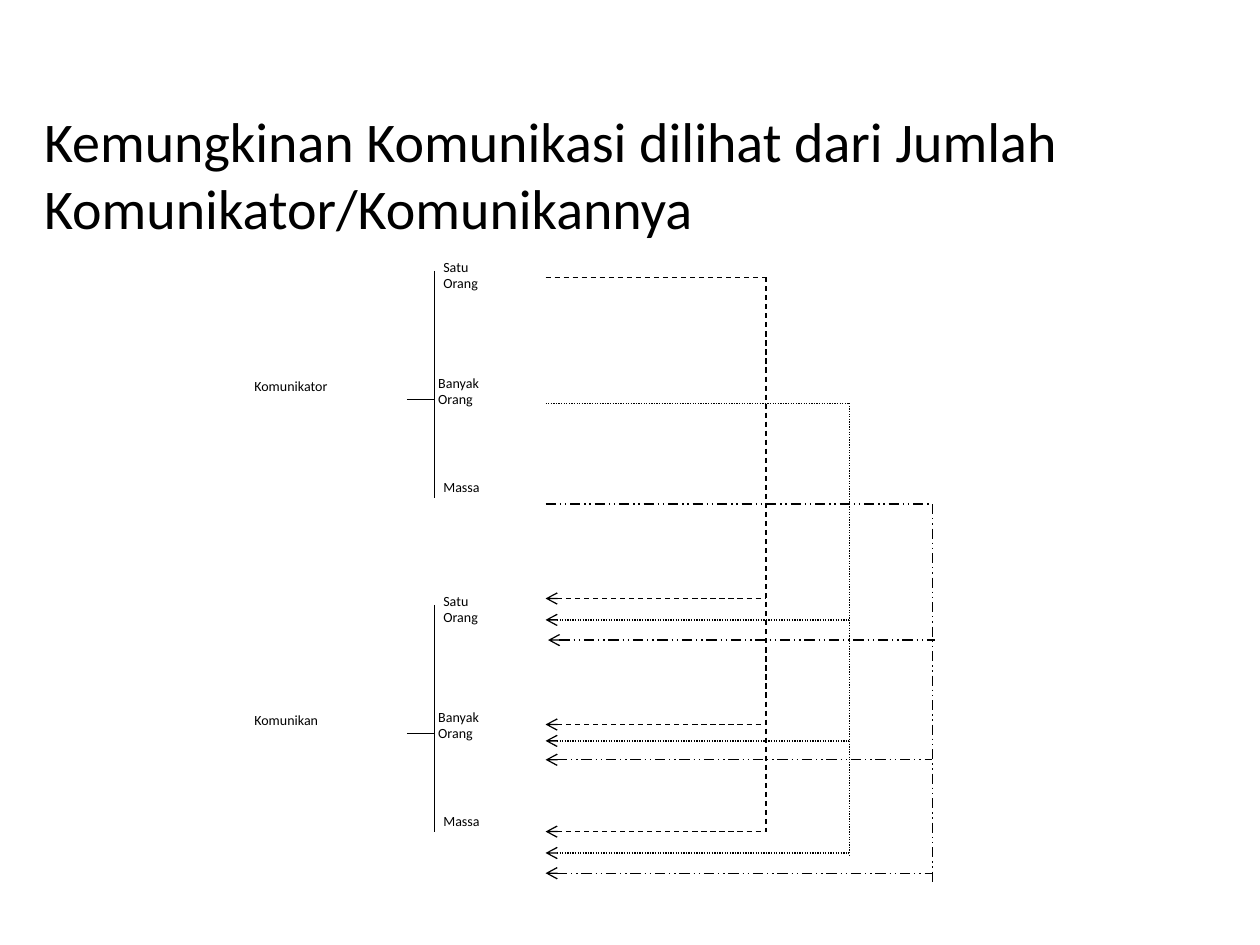
from dataclasses import dataclass

from pptx import Presentation, util as u
from pptx.dml.color import RGBColor
from pptx.enum import dml, shapes, text
from pptx.oxml.ns import qn
from lxml import etree


@dataclass(frozen=True)
class Theme:
    font: str = "Calibri"
    ink: RGBColor = RGBColor(0, 0, 0)
    paper: RGBColor = RGBColor(255, 255, 255)
    title: int = 32
    label: int = 8
    line: float = 0.75


T = Theme()
DASH = dml.MSO_LINE

# Content
TITLE = "Kemungkinan Komunikasi dilihat dari Jumlah Komunikator/Komunikannya"
PARTIES = [("Komunikator", 2.0), ("Komunikan", 4.65)]  # name, top of its block
# lines of text, left, offset from block top, height, white fill
LEVELS = [
    (["Satu", "Orang"], 3.42, 0, 0.6, True),
    (["Banyak", "Orang"], 3.38, 0.92, 0.58, False),
    (["Massa"], 3.42, 1.75, 0.6, False),
]
# dash, trunk x, source y, trunk end y, arrows as (y, shift in x)
ROUTES = [
    (DASH.DASH, 6.08, 2.2, 6.6, [(4.75, 0), (5.75, 0), (6.6, 0)]),
    (DASH.ROUND_DOT, 6.74, 3.2, 6.8, [(4.92, 0), (5.88, 0), (6.77, 0)]),
    (DASH.DASH_DOT_DOT, 7.4, 4.0, 7.0, [(5.08, 0.02), (6.03, 0), (6.93, 0)]),
]

# Grid
NAME_X, BOX_W, STEM_X, BRACKET_X, ROUTE_X = 1.92, 1.53, 3.23, 3.45, 4.33

prs = Presentation()
prs.slide_width, prs.slide_height = u.Inches(10), u.Inches(7.5)
s = prs.slides.add_slide(prs.slide_layouts[5])


def place(sp, x, y, w, h):
    sp.left, sp.top, sp.width, sp.height = map(u.Inches, (x, y, w, h))


def write(sp, lines, size=T.label, anchor=text.MSO_ANCHOR.TOP):
    tf = sp.text_frame
    tf.word_wrap = True
    tf.auto_size = text.MSO_AUTO_SIZE.NONE
    tf.vertical_anchor = anchor
    for i, line in enumerate(lines):
        p = tf.add_paragraph() if i else tf.paragraphs[0]
        p.alignment = text.PP_ALIGN.LEFT
        r = p.add_run()
        r.text = line
        r.font.name, r.font.size = T.font, u.Pt(size)
        r.font.color.rgb = T.ink


def add_label(lines, x, y, h, filled):
    sp = s.shapes.add_textbox(0, 0, 0, 0)
    place(sp, x, y, BOX_W, h)
    if filled:
        sp.fill.solid()
        sp.fill.fore_color.rgb = T.paper
    write(sp, lines)


def add_line(x1, y1, x2, y2, dash=None, arrow=False):
    c = s.shapes.add_connector(shapes.MSO_CONNECTOR.STRAIGHT,
                               *map(u.Inches, (x1, y1, x2, y2)))
    c.line.color.rgb = T.ink
    c.line.width = u.Pt(T.line)
    if dash:
        c.line.dash_style = dash
    if arrow:
        ln = c._element.spPr.find(qn("a:ln"))
        etree.SubElement(ln, qn("a:headEnd"), type="arrow")
    etree.SubElement(c._element.spPr, qn("a:effectLst"))


# Title
place(s.shapes.title, 0.25, 0.75, 9, 1.25)
write(s.shapes.title, [TITLE], T.title, text.MSO_ANCHOR.MIDDLE)

# Sender and receiver blocks, each with a bracket
for name, top in PARTIES:
    add_label([name], NAME_X, top + 0.95, 0.4, True)
    for lines, x, dy, h, filled in LEVELS:
        add_label(lines, x, top + dy, h, filled)
    add_line(STEM_X, top + 1.17, BRACKET_X, top + 1.17)
    add_line(BRACKET_X, top + 0.15, BRACKET_X, top + 1.95)

# Routes from each sender to every receiver
for dash, trunk, start, end, arrows in ROUTES:
    add_line(ROUTE_X, start, trunk, start, dash)
    for y, dx in arrows:
        add_line(ROUTE_X + dx, y, trunk + dx, y, dash, arrow=True)
    add_line(trunk, start, trunk, end, dash)

prs.save("out.pptx")
